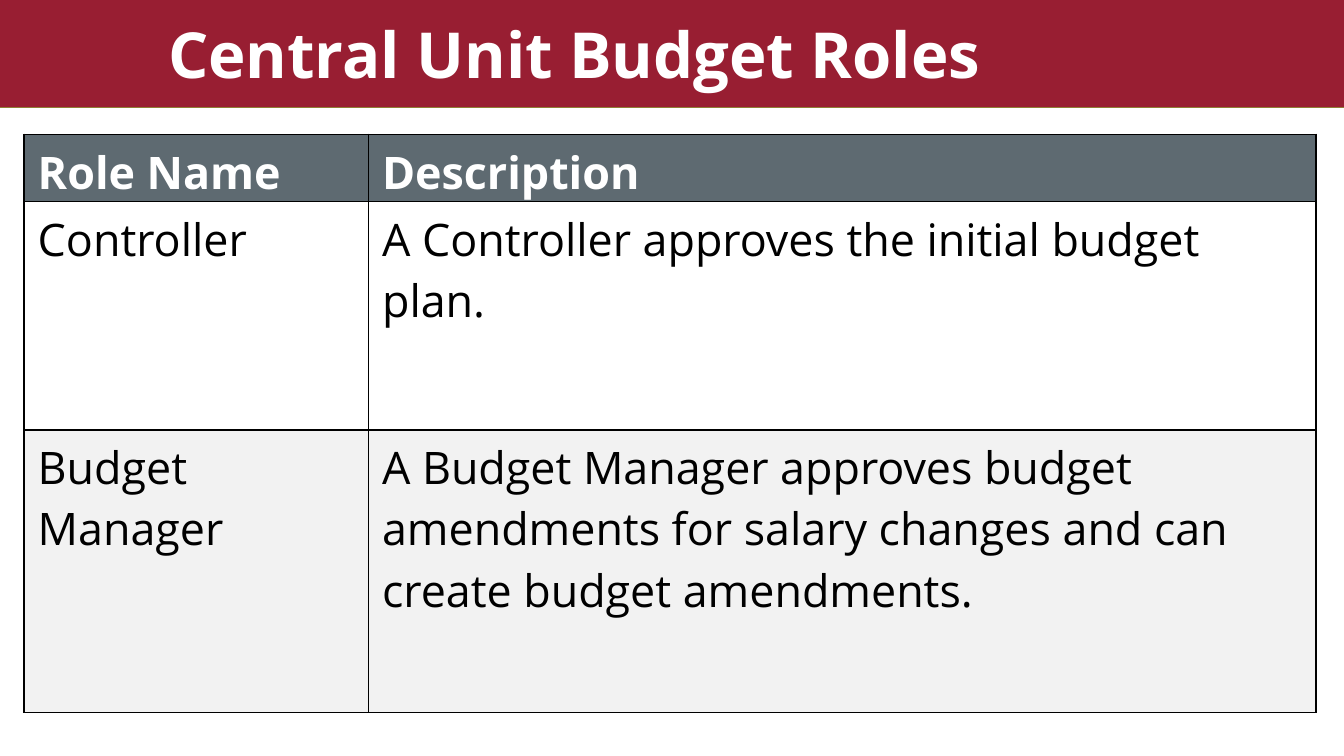
"""Build the slide that describes the central unit budget roles."""
from dataclasses import dataclass

from lxml.etree import SubElement
from pptx import Presentation
from pptx.dml.color import RGBColor
from pptx.enum.shapes import MSO_CONNECTOR, MSO_SHAPE
from pptx.enum.text import MSO_ANCHOR
from pptx.oxml.ns import qn
from pptx.slide import Slide
from pptx.table import _Cell
from pptx.text.text import _Paragraph
from pptx.util import Pt


@dataclass(frozen=True)
class Theme:
    font: str = "Open Sans"
    title_size: int = 34
    table_size: int = 24
    crimson: str = "981E32"
    gold: str = "8F7E35"
    slate: str = "5E6A71"
    pale: str = "F2F2F2"
    white: str = "FFFFFF"
    black: str = "000000"


@dataclass(frozen=True)
class RoleRow:
    name: str
    description: str
    height: float
    fill: str
    header: bool = False


THEME = Theme()
WIDTH, HEIGHT = 720, 405
BANNER_HEIGHT = 57.6
COLUMN_WIDTHS = (184.5, 507.5)
ROWS = (
    RoleRow("Role Name", "Description", 36, THEME.slate, header=True),
    RoleRow("Controller", "A Controller approves the initial budget plan.", 122.4, THEME.white),
    RoleRow(
        "Budget Manager",
        "A Budget Manager approves budget amendments for salary changes "
        "and can create budget amendments.",
        151.2,
        THEME.pale,
    ),
)


def color(value: str) -> RGBColor:
    return RGBColor.from_string(value)


def style_text(para: _Paragraph, size: float, value: str, bold: bool) -> None:
    para.font.name = THEME.font
    para.font.size = Pt(size)
    para.font.bold = bold
    para.font.color.rgb = color(value)


def draw_banner(page: Slide) -> None:
    banner = page.shapes.add_shape(MSO_SHAPE.RECTANGLE, 0, 0, Pt(WIDTH), Pt(BANNER_HEIGHT))
    banner.shadow.inherit = False
    banner.fill.solid()
    banner.fill.fore_color.rgb = color(THEME.crimson)
    banner.line.fill.background()

    rule = page.shapes.add_connector(
        MSO_CONNECTOR.STRAIGHT, 0, Pt(BANNER_HEIGHT), Pt(WIDTH), Pt(BANNER_HEIGHT)
    )
    rule.line.color.rgb = color(THEME.gold)
    rule.line.width = Pt(1)
    SubElement(rule._element.spPr, qn("a:effectLst"))


def draw_title(page: Slide, text: str) -> None:
    box = page.shapes.add_textbox(Pt(54), Pt(7.2), Pt(658), Pt(46))
    frame = box.text_frame
    frame.word_wrap = True
    frame.vertical_anchor = MSO_ANCHOR.BOTTOM
    frame.margin_left = frame.margin_right = Pt(36)
    para = frame.paragraphs[0]
    para.text = text
    para.line_spacing = 0.9
    style_text(para, THEME.title_size, THEME.white, True)


def draw_borders(cell: _Cell) -> None:
    properties = cell._tc.get_or_add_tcPr()
    for side in ("lnL", "lnR", "lnT", "lnB"):
        line = SubElement(properties, qn(f"a:{side}"), w=str(Pt(1)))
        fill = SubElement(line, qn("a:solidFill"))
        SubElement(fill, qn("a:srgbClr"), val=THEME.black)


def fill_cell(cell: _Cell, text: str, row: RoleRow) -> None:
    draw_borders(cell)
    cell.fill.solid()
    cell.fill.fore_color.rgb = color(row.fill)
    cell.vertical_anchor = MSO_ANCHOR.MIDDLE if row.header else MSO_ANCHOR.TOP
    para = cell.text_frame.paragraphs[0]
    para.text = text
    style_text(para, THEME.table_size, THEME.white if row.header else THEME.black, row.header)


def draw_roles(page: Slide) -> None:
    table = page.shapes.add_table(
        len(ROWS), len(COLUMN_WIDTHS), Pt(13), Pt(72),
        Pt(sum(COLUMN_WIDTHS)), Pt(sum(row.height for row in ROWS)),
    ).table
    table.horz_banding = False
    for column, width in zip(table.columns, COLUMN_WIDTHS):
        column.width = Pt(width)
    for index, row in enumerate(ROWS):
        table.rows[index].height = Pt(row.height)
        for position, text in enumerate((row.name, row.description)):
            fill_cell(table.cell(index, position), text, row)


def main() -> None:
    deck = Presentation()
    deck.slide_width, deck.slide_height = Pt(WIDTH), Pt(HEIGHT)
    page = deck.slides.add_slide(deck.slide_layouts[6])
    draw_banner(page)
    draw_title(page, "Central Unit Budget Roles")
    draw_roles(page)
    deck.save("out.pptx")


if __name__ == "__main__":
    main()
